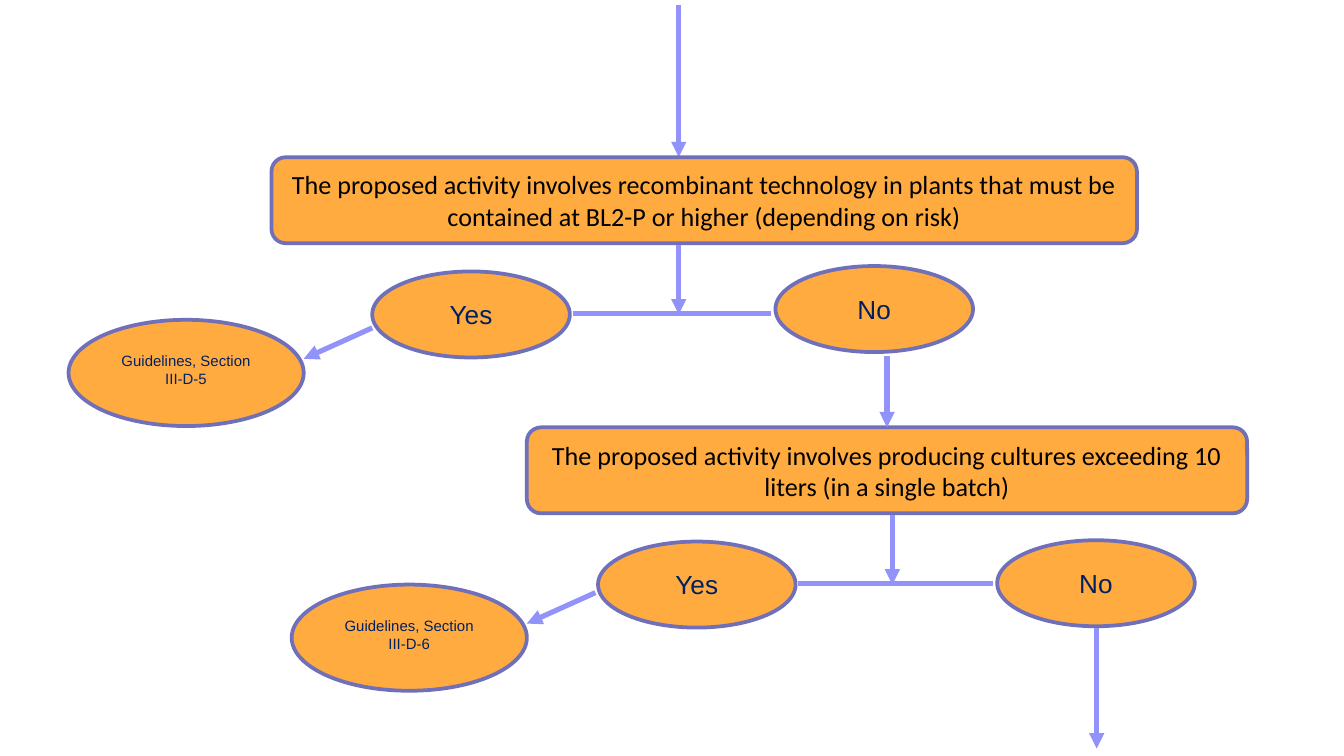
from dataclasses import dataclass
from lxml.etree import SubElement
from pptx import Presentation
from pptx.dml.color import RGBColor as Color
from pptx.enum.shapes import MSO_CONNECTOR as Connector, MSO_SHAPE as Shape
from pptx.enum.text import MSO_ANCHOR as Anchor, PP_ALIGN as Align
from pptx.oxml.ns import qn
from pptx.util import Pt

PX = 9144


@dataclass(frozen=True)
class Theme:
    fill: str = "FFAB40"
    outline: str = "6F6FBA"
    arrow: str = "9292FB"
    question: str = "000000"
    answer: str = "002060"
    question_font: str = "Calibri"
    answer_font: str = "Arial"
    body: float = 14
    small: float = 8
    outline_width: float = 2
    arrow_width: float = 2.75


@dataclass(frozen=True)
class Box:
    left: int
    top: int
    width: int
    height: int

    @property
    def right(self):
        return self.left + self.width

    @property
    def bottom(self):
        return self.top + self.height

    def place(self, x, y, width, height):
        return Box(self.left + x, self.top + y, width, height)


@dataclass(frozen=True)
class Decision:
    question: str
    guideline: str
    stem: int
    yes: tuple
    no: tuple
    outcome: tuple


THEME = Theme()
ANSWER_SIZE = (147, 64)
OUTCOME_SIZE = (175, 79)


def add_node(page, kind, box, text, font, size, color, bottom_inset=4):
    node = page.shapes.add_shape(
        kind, box.left * PX, box.top * PX, box.width * PX, box.height * PX)
    node.shadow.inherit = False
    node.fill.solid()
    node.fill.fore_color.rgb = Color.from_string(THEME.fill)
    node.line.color.rgb = Color.from_string(THEME.outline)
    node.line.width = Pt(THEME.outline_width)
    frame = node.text_frame
    frame.word_wrap = True
    frame.vertical_anchor = Anchor.MIDDLE
    frame.margin_left = frame.margin_right = 7 * PX
    frame.margin_top = 4 * PX
    frame.margin_bottom = bottom_inset * PX
    para = frame.paragraphs[0]
    para.text = text
    para.alignment = Align.CENTER
    para.font.name = font
    para.font.size = Pt(size)
    para.font.color.rgb = Color.from_string(color)
    return node


def add_line(page, start, end, arrow=True):
    line = page.shapes.add_connector(
        Connector.STRAIGHT, *(value * PX for value in (*start, *end)))
    line.line.color.rgb = Color.from_string(THEME.arrow)
    line.line.width = Pt(THEME.arrow_width)
    if arrow:
        SubElement(line.line._get_or_add_ln(), qn("a:tailEnd"), type="triangle")
    SubElement(line._element.spPr, qn("a:effectLst"))
    return line


def add_decision(page, box, decision):
    yes = box.place(*decision.yes, *ANSWER_SIZE)
    no = box.place(*decision.no, *ANSWER_SIZE)
    outcome = box.place(*decision.outcome, *OUTCOME_SIZE)
    stem = box.left + decision.stem
    bar = yes.top + 31
    tip = (outcome.right, outcome.top + 29)

    question = add_node(page, Shape.ROUNDED_RECTANGLE, box, decision.question,
                        THEME.question_font, THEME.body, THEME.question)
    add_line(page, (stem, box.bottom + 1), (stem, box.bottom + 53))
    add_line(page, (yes.right + 2, bar), (no.left - 3, bar), arrow=False)
    for answer, text in ((yes, "Yes"), (no, "No")):
        add_node(page, Shape.OVAL, answer, text,
                 THEME.answer_font, THEME.body, THEME.answer)
    add_node(page, Shape.OVAL, outcome, decision.guideline,
             THEME.answer_font, THEME.small, THEME.answer, bottom_inset=9)
    add_line(page, (tip[0] + 51, tip[1] - 23), tip)
    return question, no


def main():
    deck = Presentation()
    deck.slide_width = 1000 * PX
    deck.slide_height = deck.slide_width * 9 // 16
    page = deck.slides.add_slide(deck.slide_layouts[6])

    plants = Decision(
        "The proposed activity involves recombinant technology in plants "
        "that must be contained at BL2-P or higher (depending on risk)",
        "Guidelines, Section III-D-5",
        stem=303, yes=(75, 85), no=(375, 81), outcome=(-151, 121))
    cultures = Decision(
        "The proposed activity involves producing cultures exceeding 10 "
        "liters (in a single batch)",
        "Guidelines, Section III-D-6",
        stem=272, yes=(53, 85), no=(350, 84), outcome=(-175, 117))

    plants_box = Box(202, 117, 644, 64)
    cultures_box = Box(392, 318, 536, 64)
    entry = plants_box.left + plants.stem
    add_line(page, (entry, 4), (entry, plants_box.top))
    _, plants_no = add_decision(page, plants_box, plants)
    question, cultures_no = add_decision(page, cultures_box, cultures)

    middle = cultures_box.left + cultures_box.width // 2
    link = add_line(page, (middle, plants_no.bottom + 3), (middle, cultures_box.top))
    link.end_connect(question, 0)
    leave = cultures_no.left + cultures_no.width // 2 + 1
    add_line(page, (leave, cultures_no.bottom + 1), (leave, 557))

    deck.save("out.pptx")


if __name__ == "__main__":
    main()
